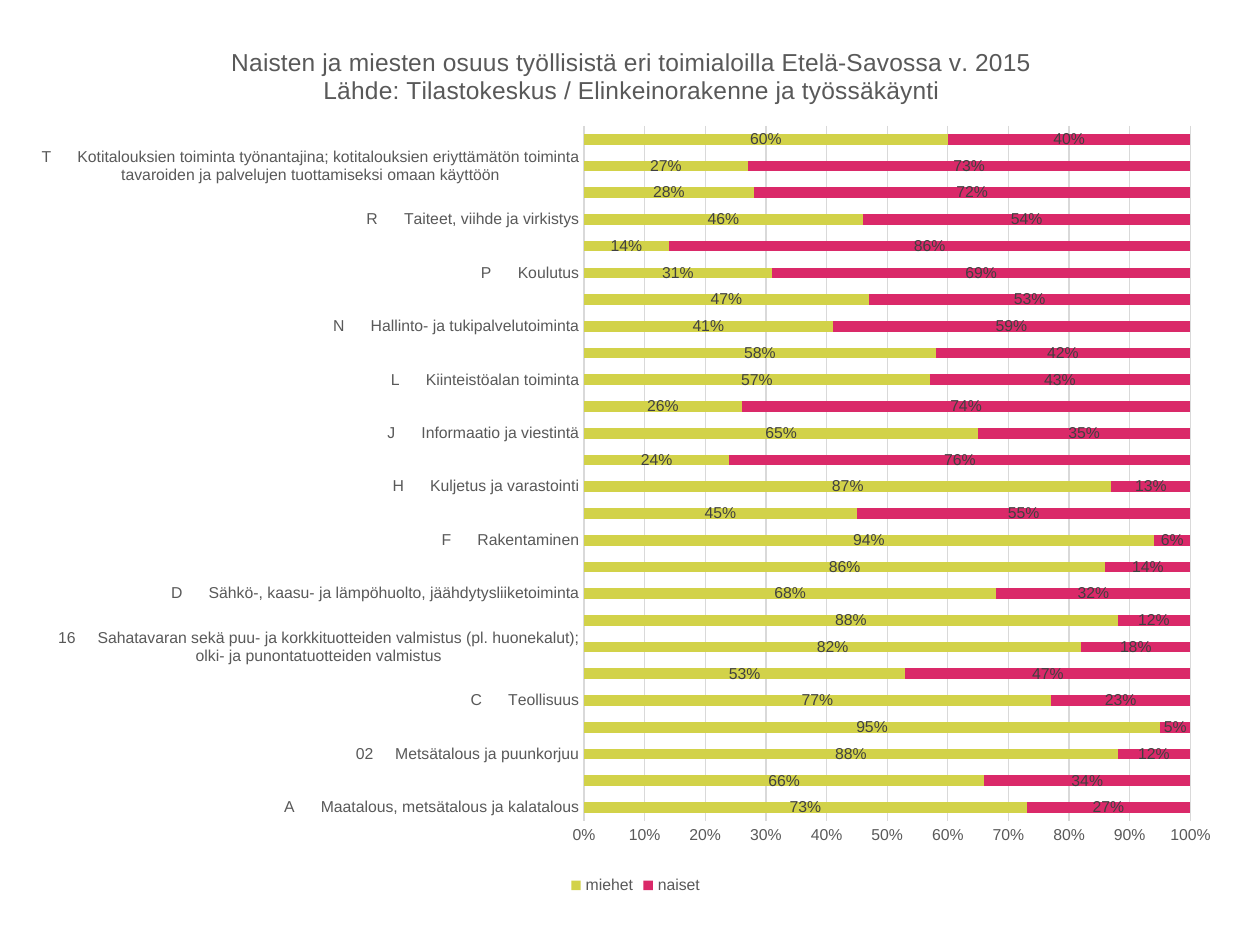
from dataclasses import dataclass
from typing import NamedTuple

from lxml import etree
from pptx import Presentation
from pptx.chart.data import CategoryChartData
from pptx.dml.color import RGBColor
from pptx.enum import chart as ce
from pptx.oxml import ns
from pptx.util import Inches, Pt


@dataclass(frozen=True)
class Theme:
    font: str = "Arial"
    title_size: float = 14
    base_size: float = 10
    label_size: float = 9
    black: str = "000000"
    grey: str = "595959"
    dark: str = "404040"
    grid: str = "D9D9D9"
    men: str = "D2D249"
    women: str = "DA2969"


class Industry(NamedTuple):
    code: str
    name: str
    men: float

    @property
    def label(self) -> str:
        """The code padded to a fixed width, then the name."""
        return f"{self.code:<7}{self.name}"

    @property
    def women(self) -> float:
        return round(1 - self.men, 2)


THEME = Theme()
TITLE = ("Naisten ja miesten osuus työllisistä eri toimialoilla Etelä-Savossa v. 2015",
         "Lähde: Tilastokeskus / Elinkeinorakenne ja työssäkäynti")
INDUSTRIES = [
    Industry("A", "Maatalous, metsätalous ja kalatalous", 0.73),
    Industry("01", "Kasvinviljely ja kotieläintalous, riistatalous ja niihin liittyvät palvelut", 0.66),
    Industry("02", "Metsätalous ja puunkorjuu", 0.88),
    Industry("B", "Kaivostoiminta ja louhinta", 0.95),
    Industry("C", "Teollisuus", 0.77),
    Industry("10", "Elintarvikkeiden valmistus", 0.53),
    Industry("16", "Sahatavaran sekä puu- ja korkkituotteiden valmistus (pl. huonekalut); "
                   "olki- ja punontatuotteiden valmistus", 0.82),
    Industry("25", "Metallituotteiden valmistus (pl. koneet ja laitteet)", 0.88),
    Industry("D", "Sähkö-, kaasu- ja lämpöhuolto, jäähdytysliiketoiminta", 0.68),
    Industry("E", "Vesihuolto, viemäri- ja jätevesihuolto, jätehuolto ja muu "
                  "ympäristön puhtaanapito", 0.86),
    Industry("F", "Rakentaminen", 0.94),
    Industry("G", "Tukku- ja vähittäiskauppa; moottoriajoneuvojen ja moottoripyörien korjaus", 0.45),
    Industry("H", "Kuljetus ja varastointi", 0.87),
    Industry("I", "Majoitus- ja ravitsemistoiminta", 0.24),
    Industry("J", "Informaatio ja viestintä", 0.65),
    Industry("K", "Rahoitus- ja vakuutustoiminta", 0.26),
    Industry("L", "Kiinteistöalan toiminta", 0.57),
    Industry("M", "Ammatillinen, tieteellinen ja tekninen toiminta", 0.58),
    Industry("N", "Hallinto- ja tukipalvelutoiminta", 0.41),
    Industry("O", "Julkinen hallinto ja maanpuolustus; pakollinen sosiaalivakuutus", 0.47),
    Industry("P", "Koulutus", 0.31),
    Industry("Q", "Terveys- ja sosiaalipalvelut", 0.14),
    Industry("R", "Taiteet, viihde ja virkistys", 0.46),
    Industry("S", "Muu palvelutoiminta", 0.28),
    Industry("T", "Kotitalouksien toiminta työnantajina; kotitalouksien eriyttämätön toiminta "
                  "tavaroiden ja palvelujen tuottamiseksi omaan käyttöön", 0.27),
    Industry("X", "Toimiala tuntematon", 0.6),
]


def style(font, *, size: float = THEME.label_size, color: str = THEME.grey) -> None:
    font.name = THEME.font
    font.size = Pt(size)
    font.bold = False
    font.color.rgb = RGBColor.from_string(color)


def write(paragraph, words: str, **look) -> None:
    run = paragraph.add_run()
    run.text = words
    style(run.font, **look)


def place(parent, index: int, **fractions: float) -> None:
    """Give a chart part a manual layout in fractions of the chart."""
    for old in parent.findall(ns.qn("c:layout")):
        parent.remove(old)
    layout = etree.Element(ns.qn("c:layout"))
    manual = etree.SubElement(layout, ns.qn("c:manualLayout"))
    if "w" in fractions:
        etree.SubElement(manual, ns.qn("c:layoutTarget"), val="inner")
    for side in ("x", "y"):
        etree.SubElement(manual, ns.qn(f"c:{side}Mode"), val="edge")
    for key, value in fractions.items():
        etree.SubElement(manual, ns.qn(f"c:{key}"), val=str(value))
    parent.insert(index, layout)


def add_title(chart) -> None:
    chart.has_title = True
    title = chart.chart_title
    title.include_in_layout = False
    frame = title.text_frame
    for number, line in enumerate(TITLE):
        paragraph = frame.add_paragraph() if number else frame.paragraphs[0]
        write(paragraph, line, size=THEME.title_size)
    place(title._element, 1, x=0.16, y=0.03)


def format_axes(chart) -> None:
    for axis in (chart.category_axis, chart.value_axis):
        axis.major_tick_mark = axis.minor_tick_mark = ce.XL_TICK_MARK.NONE
        style(axis.tick_labels.font)
    shares = chart.value_axis
    shares.has_major_gridlines = True
    shares.minimum_scale, shares.maximum_scale, shares.major_unit = 0, 1, 0.1
    shares.tick_labels.number_format = "0%"
    shares.tick_labels.number_format_is_linked = False
    shares.format.line.fill.background()
    for line in (chart.category_axis.format.line, shares.major_gridlines.format.line):
        line.color.rgb = RGBColor.from_string(THEME.grid)
        line.width = Pt(0.75)


def format_bars(chart) -> None:
    plot = chart.plots[0]
    plot.gap_width, plot.overlap, plot.vary_by_categories = 150, 100, False
    for series, color in zip(plot.series, (THEME.men, THEME.women)):
        series.format.fill.solid()
        series.format.fill.fore_color.rgb = RGBColor.from_string(color)
        series.invert_if_negative = False
        labels = series.data_labels
        labels.show_value = True
        labels.number_format = "0%"
        labels.number_format_is_linked = False
        style(labels.font, color=THEME.dark)


def add_share_chart(slide) -> None:
    data = CategoryChartData(number_format="0%")
    data.categories = [industry.label for industry in INDUSTRIES]
    data.add_series("miehet", [industry.men for industry in INDUSTRIES])
    data.add_series("naiset", [industry.women for industry in INDUSTRIES])
    chart = slide.shapes.add_chart(
        ce.XL_CHART_TYPE.BAR_STACKED_100,
        Inches(0.28), Inches(0.13), Inches(9.53), Inches(7.01), data).chart
    style(chart.font, size=THEME.base_size, color=THEME.black)
    add_title(chart)
    format_axes(chart)
    format_bars(chart)
    chart.has_legend = True
    chart.legend.position = ce.XL_LEGEND_POSITION.BOTTOM
    chart.legend.include_in_layout = False
    style(chart.legend.font)
    plot_area = chart._chartSpace.chart.plotArea
    place(plot_area, 0, x=0.457, y=0.124, w=0.505, h=0.787)


def main() -> None:
    deck = Presentation()
    deck.slide_width, deck.slide_height = Inches(10), Inches(7.5)
    add_share_chart(deck.slides.add_slide(deck.slide_layouts[6]))
    deck.save("out.pptx")


if __name__ == "__main__":
    main()
